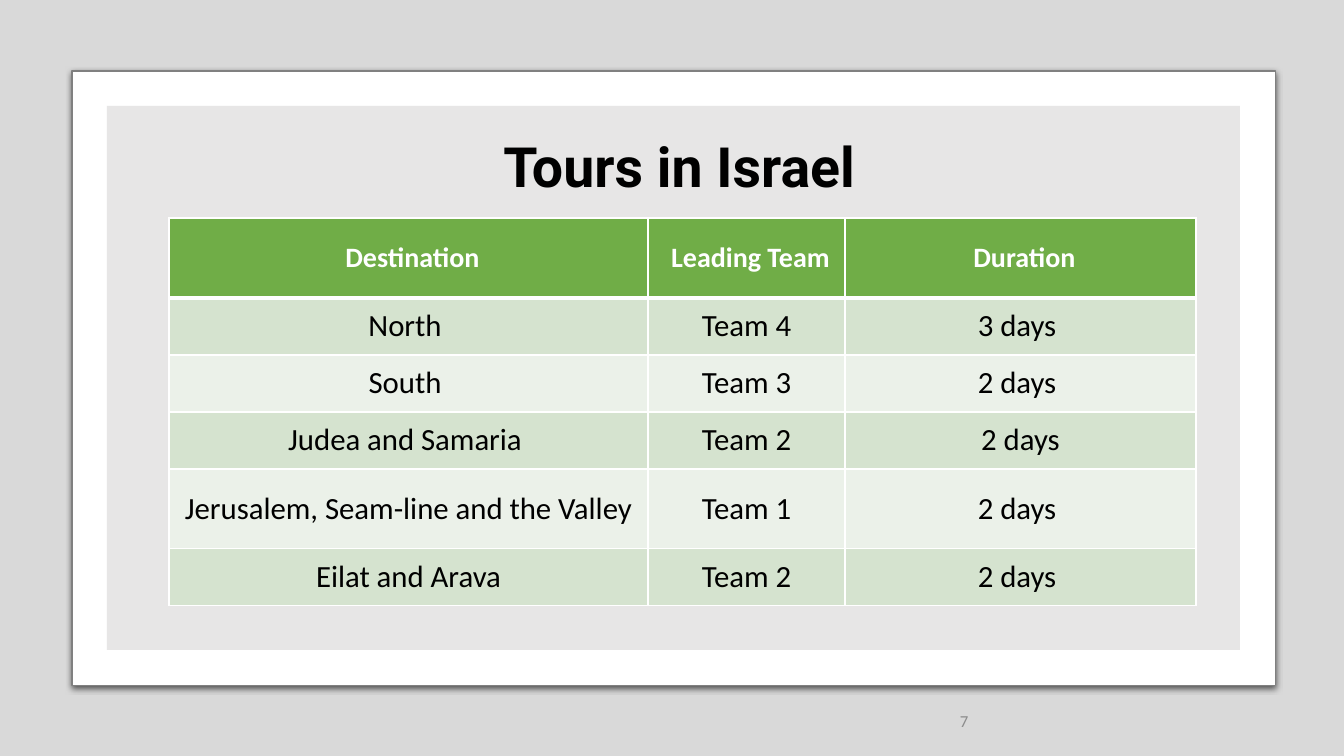
from lxml import etree
from pptx import Presentation
from pptx import util as u
from pptx.dml.color import RGBColor
from pptx.enum import shapes, text
from pptx.oxml import parse_xml
from pptx.oxml.ns import qn

EMU_PER_PX = 914400 / 100.8
COLORS = {
    "black": "000000",
    "white": "FFFFFF",
    "frame": "808080",
    "panel": "E7E6E6",
    "number": "8C8C8C",
    "header": "70AD47",
    "odd": "D5E3CF",
    "even": "EBF1E9",
}
TOURS = [
    ("Destination ", "Leading Team ", "Duration "),
    ("North ", "Team 4", "3 days "),
    ("South ", "Team 3", "2 days "),
    ("Judea and Samaria ", "Team 2", "2 days"),
    ("Jerusalem, Seam-line and the Valley", "Team 1", "2 days "),
    ("Eilat and Arava", "Team 2", "2 days "),
]
COLUMN_WIDTHS = (479, 197, 351)
ROW_HEIGHTS = (80, 57, 57, 57, 80, 57)


def px(value):
    """Turn pixels into EMU."""
    return u.Emu(round(value * EMU_PER_PX))


def color(name):
    """Look up a named colour."""
    return RGBColor.from_string(COLORS[name])


def add_panel(page, left, top, width, height, fill, line=None):
    """Add a flat rectangle with an optional thin outline."""
    panel = page.shapes.add_shape(
        shapes.MSO_SHAPE.RECTANGLE, px(left), px(top), px(width), px(height))
    panel.shadow.inherit = False
    panel.fill.solid()
    panel.fill.fore_color.rgb = color(fill)
    if line:
        panel.line.color.rgb = color(line)
        panel.line.width = u.Pt(0.75)
    else:
        panel.line.fill.background()
    return panel


def set_alpha(parent, percent):
    """Make the colour inside an element partly transparent."""
    tint = next(parent.iter(qn("a:srgbClr")))
    etree.SubElement(tint, qn("a:alpha"), val=str(percent * 1000))


def add_shadow(panel):
    """Give a panel a soft shadow falling downwards."""
    effects = panel._element.spPr.find(qn("a:effectLst"))
    shadow = etree.SubElement(
        effects, qn("a:outerShdw"), blurRad=str(u.Pt(4.5)),
        dist=str(u.Pt(1.5)), dir="5400000", algn="t", rotWithShape="0")
    etree.SubElement(shadow, qn("a:srgbClr"), val=COLORS["black"])
    set_alpha(shadow, 63)


def write(frame, words, size, tint, font="Calibri", bold=False,
          align=text.PP_ALIGN.CENTER, rtl=False):
    """Write one styled run into a text frame."""
    para = frame.paragraphs[0]
    para.alignment = align
    if rtl:
        para._p.get_or_add_pPr().set("rtl", "1")
    span = para.add_run()
    span.text = words
    span.font.name = font
    span.font.size = u.Pt(size)
    span.font.bold = bold
    span.font.color.rgb = color(tint)


def add_label(page, left, top, width, height, words, size, tint, **style):
    """Add a vertically centred text box."""
    box = page.shapes.add_textbox(px(left), px(top), px(width), px(height))
    box.text_frame.word_wrap = True
    box.text_frame.vertical_anchor = text.MSO_ANCHOR.MIDDLE
    write(box.text_frame, words, size, tint, **style)


def set_borders(cell, bottom):
    """Draw white cell borders with a chosen bottom width."""
    properties = cell._tc.get_or_add_tcPr()
    widths = {"lnL": 1, "lnR": 1, "lnT": 1, "lnB": bottom}
    for index, (side, width) in enumerate(widths.items()):
        properties.insert(index, parse_xml(
            f'<a:{side} xmlns:a="http://schemas.openxmlformats.org/drawingml/2006/main"'
            f' w="{u.Pt(width)}"><a:solidFill><a:srgbClr val="{COLORS["white"]}"/>'
            f'</a:solidFill></a:{side}>'))


def add_tours(page, left, top):
    """Add the table of tours with a header and banded rows."""
    table = page.shapes.add_table(
        len(TOURS), len(COLUMN_WIDTHS), px(left), px(top),
        px(sum(COLUMN_WIDTHS)), px(sum(ROW_HEIGHTS))).table
    for column, width in zip(table.columns, COLUMN_WIDTHS):
        column.width = px(width)
    for row, height in zip(table.rows, ROW_HEIGHTS):
        row.height = px(height)
    for row_index, tour in enumerate(TOURS):
        header = row_index == 0
        band = "header" if header else "odd" if row_index % 2 else "even"
        for column_index, words in enumerate(tour):
            cell = table.cell(row_index, column_index)
            cell.fill.solid()
            cell.fill.fore_color.rgb = color(band)
            cell.vertical_anchor = text.MSO_ANCHOR.MIDDLE
            set_borders(cell, 3 if header else 1)
            write(cell.text_frame, words, 20 if header else 22,
                  "white" if header else "black", bold=header, rtl=header)


def main():
    """Build the tours slide and save it."""
    deck = Presentation()
    deck.slide_width, deck.slide_height = px(1344), px(756)
    page = deck.slides.add_slide(deck.slide_layouts[6])
    backdrop = add_panel(page, 0, 0, 1344, 756, "black")
    set_alpha(backdrop._element.spPr, 15)
    add_shadow(add_panel(page, 72, 71, 1204, 615, "white", "frame"))
    add_panel(page, 107, 106, 1133, 544, "panel")
    add_label(page, 182, 129, 979, 72, "Tours in Israel ", 39.6, "black",
              font="Roboto", bold=True, rtl=True)
    add_label(page, 950, 701, 302, 40, "7", 12, "number",
              align=text.PP_ALIGN.LEFT)
    add_tours(page, 169, 218)
    deck.save("out.pptx")


if __name__ == "__main__":
    main()
